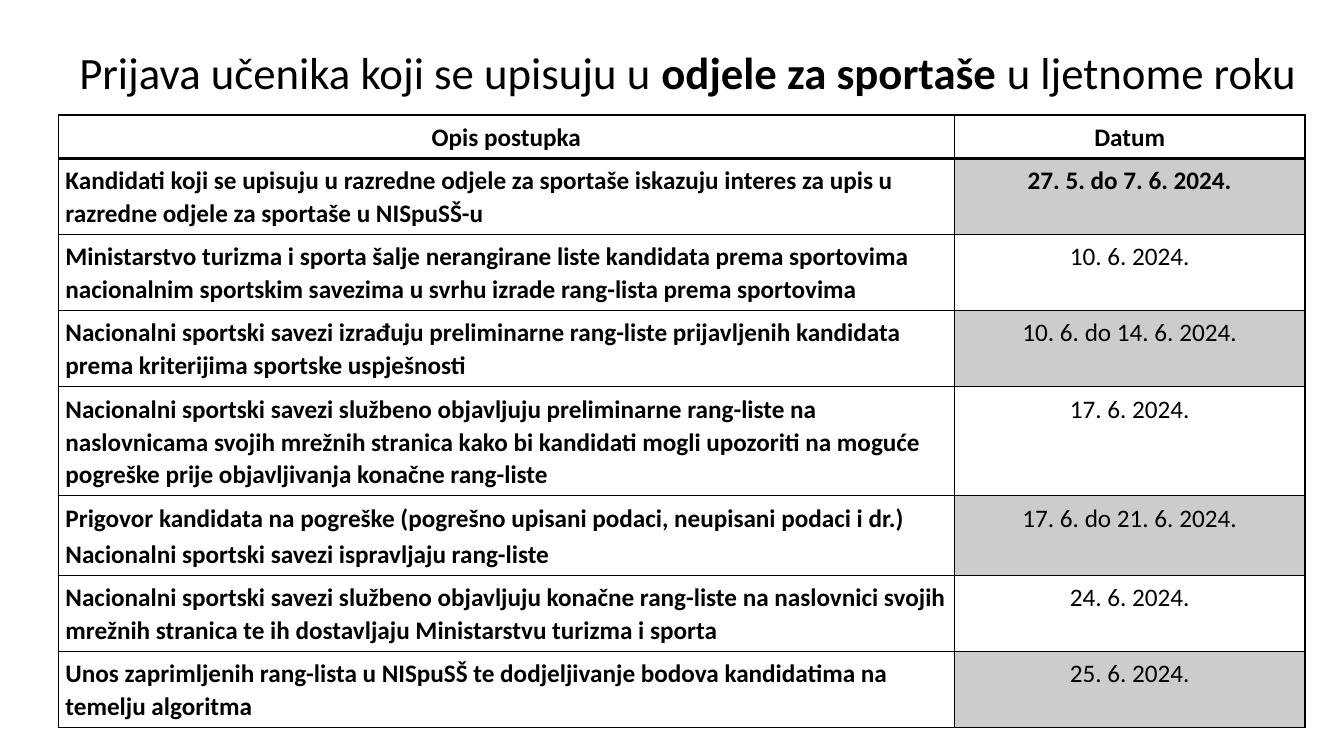
from dataclasses import dataclass
from pptx import Presentation
from pptx.dml.color import RGBColor as Rgb
from pptx.enum.text import MSO_ANCHOR as Anchor, MSO_AUTO_SIZE as Auto, PP_ALIGN as Align
from pptx.util import Cm, Pt
from lxml.etree import SubElement as Sub

NS = "{http://schemas.openxmlformats.org/drawingml/2006/main}"


@dataclass(frozen=True)
class Theme:
    font: str = "Calibri"
    ink: str = "000000"
    shade: int = 20
    head: float = 32
    body: float = 18
    thin: float = 0.96
    thick: float = 1.98
    lead: float = 1.07


@dataclass(frozen=True)
class Step:
    text: str
    date: str
    high: float = 1.75
    bold: bool = False
    after: float = 0


THEME = Theme()
STEPS = [
    Step("Opis postupka", "Datum", 1.07, True),
    Step("Kandidati koji se upisuju u razredne odjele za sportaše iskazuju interes "
         "za upis u razredne odjele za sportaše u NISpuSŠ-u",
         "27. 5. do 7. 6. 2024.", bold=True),
    Step("Ministarstvo turizma i sporta šalje nerangirane liste kandidata prema sportovima "
         "nacionalnim sportskim savezima u svrhu izrade rang-lista prema sportovima",
         "10. 6. 2024."),
    Step("Nacionalni sportski savezi izrađuju preliminarne rang-liste prijavljenih kandidata "
         "prema kriterijima sportske uspješnosti",
         "10. 6. do 14. 6. 2024."),
    Step("Nacionalni sportski savezi službeno objavljuju preliminarne rang-liste na "
         "naslovnicama svojih mrežnih stranica kako bi kandidati mogli upozoriti na moguće "
         "pogreške prije objavljivanja konačne rang-liste",
         "17. 6. 2024.", 2.44),
    Step("Prigovor kandidata na pogreške (pogrešno upisani podaci, neupisani podaci i dr.)\n"
         "Nacionalni sportski savezi ispravljaju rang-liste",
         "17. 6. do 21. 6. 2024.", 1.83, after=2.4),
    Step("Nacionalni sportski savezi službeno objavljuju konačne rang-liste na naslovnici svojih "
         "mrežnih stranica te ih dostavljaju Ministarstvu turizma i sporta",
         "24. 6. 2024."),
    Step("Unos zaprimljenih rang-lista u NISpuSŠ te dodjeljivanje bodova kandidatima na "
         "temelju algoritma",
         "25. 6. 2024."),
]


def style(run, size: float, bold: bool) -> None:
    font = run.font
    font.name, font.size, font.bold = THEME.font, Pt(size), bold
    font.color.rgb = Rgb.from_string(THEME.ink)


def border(cell, row: int) -> None:
    props = cell._tc.get_or_add_tcPr()
    thick = {"lnB": row == 0, "lnT": row == 1}
    for side in ("lnL", "lnR", "lnT", "lnB"):
        width = THEME.thick if thick.get(side) else THEME.thin
        line = Sub(props, NS + side, w=str(Pt(width)))
        Sub(Sub(line, NS + "solidFill"), NS + "srgbClr", val=THEME.ink)


def paint(cell, dark: bool) -> None:
    if not dark:
        cell.fill.background()
        return
    cell.fill.solid()
    cell.fill.fore_color.rgb = Rgb.from_string(THEME.ink)
    tint = cell._tc.tcPr.find(f"{NS}solidFill/{NS}srgbClr")
    Sub(tint, NS + "alpha", val=str(THEME.shade * 1000))


def write(cell, text: str, bold: bool, align: Align, after: float = 0) -> None:
    cell.margin_left = cell.margin_right = Cm(0.18)
    cell.margin_top = cell.margin_bottom = Cm(0.13)
    cell.text_frame.text = text
    for para in cell.text_frame.paragraphs:
        para.alignment = align
        para.line_spacing = THEME.lead
        para.space_after = Pt(after)
        for run in para.runs:
            style(run, THEME.body, bold)


def add_title(slide) -> None:
    title = slide.shapes.title
    title.left, title.top, title.width, title.height = Cm(1.47), Cm(0.48), Cm(31.72), Cm(2.64)
    frame = title.text_frame
    frame.word_wrap = True
    frame.auto_size = Auto.NONE
    frame.vertical_anchor = Anchor.MIDDLE
    para = frame.paragraphs[0]
    para.alignment = Align.CENTER
    parts = ("Prijava učenika koji se upisuju u ", "odjele za sportaše", " u ljetnome roku")
    for spot, part in enumerate(parts):
        run = para.add_run()
        run.text = part
        style(run, THEME.head, spot == 1)


def add_steps(slide) -> None:
    widths = (22.58, 8.84)
    high = sum(step.high for step in STEPS)
    table = slide.shapes.add_table(len(STEPS), len(widths), Cm(1.47), Cm(2.9),
                                   Cm(sum(widths)), Cm(high)).table
    table.horz_banding = False
    for col, width in zip(table.columns, widths):
        col.width = Cm(width)
    for row, step in enumerate(STEPS):
        table.rows[row].height = Cm(step.high)
        left, right = table.cell(row, 0), table.cell(row, 1)
        write(left, step.text, True, Align.LEFT if row else Align.CENTER, step.after)
        write(right, step.date, step.bold, Align.CENTER)
        for cell in (left, right):
            border(cell, row)
        paint(left, False)
        paint(right, row % 2 == 1)


def main() -> None:
    deck = Presentation()
    deck.slide_width, deck.slide_height = Cm(33.87), Cm(19.05)
    slide = deck.slides.add_slide(deck.slide_layouts[5])
    add_title(slide)
    add_steps(slide)
    deck.save("out.pptx")


if __name__ == "__main__":
    main()
